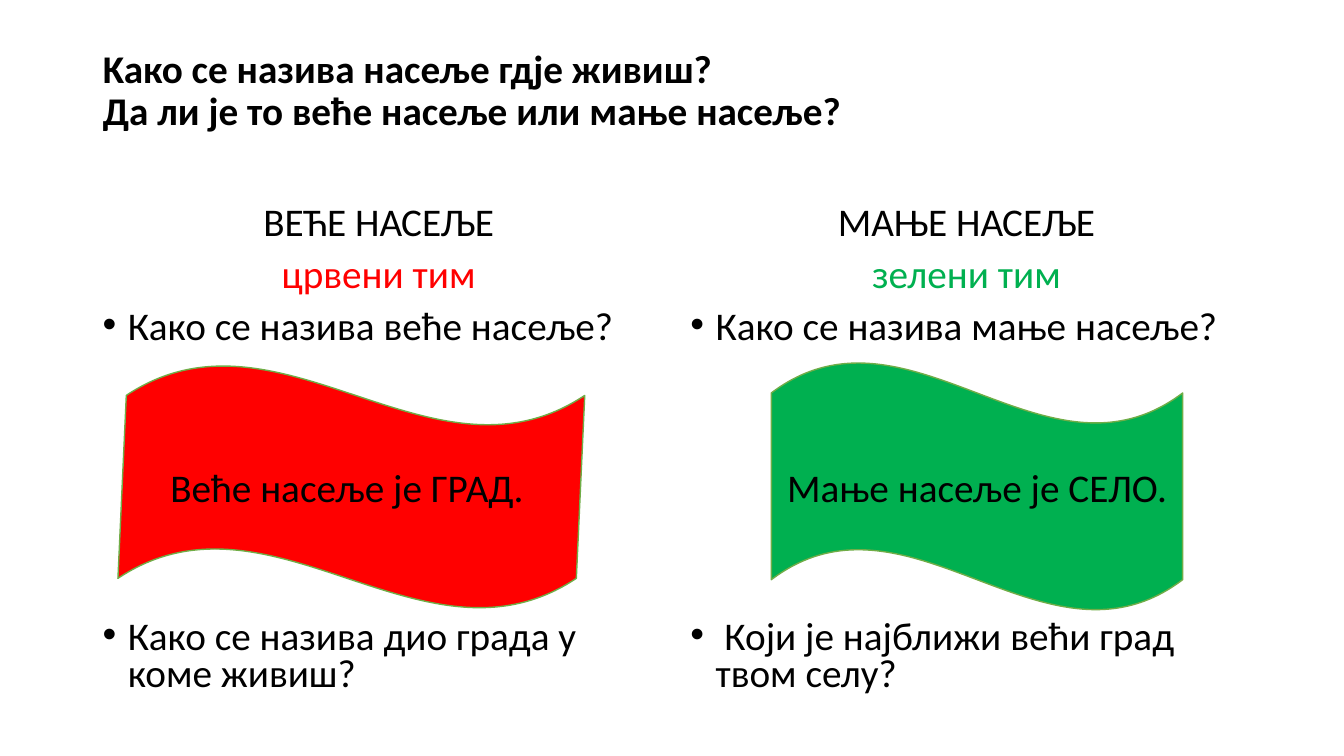
import pptx
import pptx.util
import pptx.dml.color
import pptx.enum.shapes
import pptx.enum.text
import lxml.etree

Inches = pptx.util.Inches
Pt = pptx.util.Pt
RGBColor = pptx.dml.color.RGBColor
ALIGN = pptx.enum.text.PP_ALIGN
MIDDLE = pptx.enum.text.MSO_ANCHOR.MIDDLE
WAVE = pptx.enum.shapes.MSO_SHAPE.WAVE

BLACK = RGBColor(0, 0, 0)
RED = RGBColor(0xFF, 0, 0)
GREEN = RGBColor(0, 0xB0, 0x50)
EDGE = RGBColor(0x70, 0xAD, 0x47)


def style(para, color, align, bold=False):
    para.alignment = align
    for run in para.runs:
        run.font.name = "Calibri"
        run.font.size = Pt(28)
        run.font.bold = bold
        run.font.color.rgb = color


def bullet(para):
    props = para._p.get_or_add_pPr()
    props.set("marL", str(Inches(0.25)))
    props.set("indent", str(-Inches(0.25)))
    space = props.nsmap["a"]
    font = lxml.etree.SubElement(props, f"{{{space}}}buFont")
    font.set("typeface", "Arial")
    mark = lxml.etree.SubElement(props, f"{{{space}}}buChar")
    mark.set("char", "•")


deck = pptx.Presentation()
deck.slide_width = Inches(13.33)
deck.slide_height = Inches(7.5)
slide = deck.slides.add_slide(deck.slide_layouts[5])

title = slide.shapes.title
title.left, title.top = Inches(0.92), Inches(0.4)
title.width, title.height = Inches(11.5), Inches(1.45)
frame = title.text_frame
frame.text = "Kaко се назива насеље гдје живиш?\vДа ли је то веће насеље или мање насеље?"
frame.auto_size = pptx.enum.text.MSO_AUTO_SIZE.NONE
frame.vertical_anchor = MIDDLE
frame.margin_bottom = Inches(0.48)
frame.paragraphs[0].line_spacing = 0.9
style(frame.paragraphs[0], BLACK, ALIGN.LEFT, True)

teams = [
    (0.92, RED, ["ВЕЋЕ НАСЕЉЕ", "црвени тим", "Како се назива веће насеље?",
                 "Како се назива дио града у коме живиш?"],
     (1.17, 3.62, 4.63, 2.42), -0.009, "Веће насеље је ГРАД. "),
    (6.75, GREEN, ["МАЊЕ НАСЕЉЕ", "зелени тим", "Како се назива мање насеље?",
                   " Који је најближи већи град твом селу?"],
     (7.65, 3.59, 4.08, 2.47), 0, "Мање насеље је СЕЛО."),
]
gaps = [0, 10, 10, 194.5]

for left, color, lines, place, skew, answer in teams:
    box = slide.shapes.add_textbox(Inches(left), Inches(2), Inches(5.67), Inches(5.25))
    frame = box.text_frame
    frame.word_wrap = True
    frame.text = "\n".join(lines)
    for index, para in enumerate(frame.paragraphs):
        if index > 1:
            bullet(para)
        para.line_spacing = 0.8
        para.space_before = Pt(gaps[index])
        style(para, color if index == 1 else BLACK,
              ALIGN.CENTER if index < 2 else ALIGN.LEFT)

    flag = slide.shapes.add_shape(WAVE, *[Inches(side) for side in place])
    flag.shadow.inherit = False
    flag.adjustments[0] = 0.125
    flag.adjustments[1] = skew
    flag.fill.solid()
    flag.fill.fore_color.rgb = color
    flag.line.color.rgb = EDGE
    flag.line.width = Pt(1)
    flag.text_frame.text = answer
    flag.text_frame.vertical_anchor = MIDDLE
    style(flag.text_frame.paragraphs[0], BLACK, ALIGN.CENTER)

deck.save("out.pptx")
